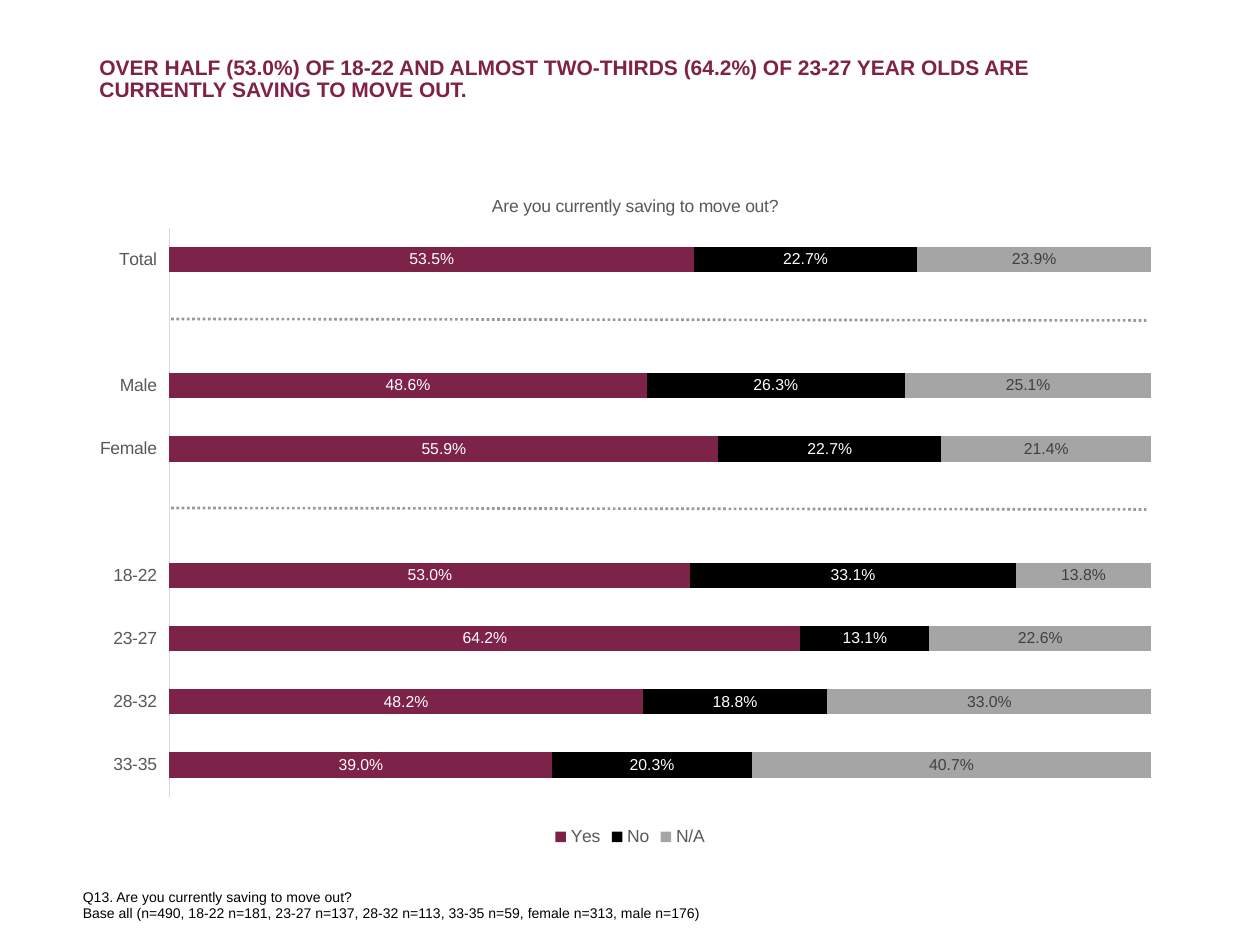
from lxml import etree
from pptx import Presentation
from pptx.chart.data import CategoryChartData
from pptx.dml.color import RGBColor
from pptx.enum.chart import (XL_CHART_TYPE, XL_LABEL_POSITION,
                             XL_LEGEND_POSITION, XL_TICK_LABEL_POSITION, XL_TICK_MARK)
from pptx.enum.dml import MSO_LINE
from pptx.enum.shapes import MSO_CONNECTOR
from pptx.enum.text import MSO_ANCHOR, PP_ALIGN
from pptx.oxml.ns import qn
from pptx.util import Cm, Pt

HEADLINE = ("OVER HALF (53.0%) OF 18-22 AND ALMOST TWO-THIRDS (64.2%) OF 23-27 "
            "YEAR OLDS ARE CURRENTLY SAVING TO MOVE OUT.")
QUESTION = "Are you currently saving to move out?"
FOOTNOTES = [
    "Q13. Are you currently saving to move out?",
    "Base all (n=490, 18-22 n=181, 23-27 n=137, 28-32 n=113, 33-35 n=59, "
    "female n=313, male n=176)",
]
COLORS = {
    "headline": "802245", "yes": "7D2248", "no": "000000", "na": "A5A5A5",
    "white": "FFFFFF", "dark": "404040", "axis_text": "595959",
    "axis_line": "D9D9D9", "divider": "98989A", "black": "000000",
}
# Answer, bar colour, label colour
ANSWERS = [("Yes", "yes", "white"), ("No", "no", "white"), ("N/A", "na", "dark")]
# Groups from top to bottom; an empty row leaves room for a divider
GROUPS = [
    ("Total", (0.535, 0.227, 0.239)),
    ("", (None, None, None)),
    ("Male", (0.486, 0.263, 0.251)),
    ("Female", (0.559, 0.227, 0.214)),
    ("", (None, None, None)),
    ("18-22", (0.53, 0.331, 0.138)),
    ("23-27", (0.642, 0.131, 0.226)),
    ("28-32", (0.482, 0.188, 0.33)),
    ("33-35", (0.39, 0.203, 0.407)),
]
DIVIDER_TOPS = [6.43, 10.24]
FONT = "Arial"


def color(key):
    return RGBColor.from_string(COLORS[key])


def style_font(font, size, key, bold=False):
    font.name, font.size, font.bold = FONT, Pt(size), bold
    font.color.rgb = color(key)


def set_layout(parent, index, **fractions):
    """Place a chart part by fractions of the chart's width and height."""
    for old in parent.findall(qn("c:layout")):
        parent.remove(old)
    layout = etree.Element(qn("c:layout"))
    manual = etree.SubElement(layout, qn("c:manualLayout"))
    if "w" in fractions:
        etree.SubElement(manual, qn("c:layoutTarget")).set("val", "inner")
    for mode in ("xMode", "yMode"):
        etree.SubElement(manual, qn("c:" + mode)).set("val", "edge")
    for name, value in fractions.items():
        etree.SubElement(manual, qn("c:" + name)).set("val", str(value))
    parent.insert(index, layout)


def add_headline(slide):
    title = slide.shapes.title
    title.left, title.top, title.width, title.height = Cm(1.75), Cm(1.02), Cm(21.9), Cm(1.63)
    frame = title.text_frame
    frame.text = HEADLINE
    frame.word_wrap = True
    frame.vertical_anchor = MSO_ANCHOR.TOP
    paragraph = frame.paragraphs[0]
    paragraph.alignment = PP_ALIGN.LEFT
    paragraph.line_spacing = 0.9
    style_font(paragraph.font, 12, "headline", bold=True)


def add_savings_chart(slide):
    rows = GROUPS[::-1]
    data = CategoryChartData(number_format="0.0%")
    data.categories = [group for group, _ in rows]
    for i, (answer, _, _) in enumerate(ANSWERS):
        data.add_series(answer, [shares[i] for _, shares in rows])
    chart = slide.shapes.add_chart(XL_CHART_TYPE.BAR_STACKED_100, Cm(1.75), Cm(3.3),
                                   Cm(21.9), Cm(13.87), data).chart
    style_font(chart.font, 10, "axis_text")

    chart.has_title = True
    question = chart.chart_title.text_frame
    question.text = QUESTION
    style_font(question.paragraphs[0].font, 10, "axis_text")
    set_layout(chart.chart_title._element, 1, x=0.37, y=0.04)

    chart.has_legend = True
    chart.legend.position = XL_LEGEND_POSITION.BOTTOM
    chart.legend.include_in_layout = False
    style_font(chart.legend.font, 10, "axis_text")

    groups = chart.category_axis
    groups.major_tick_mark = groups.minor_tick_mark = XL_TICK_MARK.NONE
    groups.tick_label_position = XL_TICK_LABEL_POSITION.LOW
    groups.format.line.color.rgb = color("axis_line")
    groups.format.line.width = Pt(0.75)
    style_font(groups.tick_labels.font, 10, "axis_text")
    shares = chart.value_axis
    shares.visible = shares.has_major_gridlines = False
    shares.minimum_scale, shares.maximum_scale = 0, 1

    plot = chart.plots[0]
    plot.gap_width, plot.overlap = 150, 100
    plot.vary_by_categories = False
    for series, (_, fill, label) in zip(plot.series, ANSWERS):
        series.format.fill.solid()
        series.format.fill.fore_color.rgb = color(fill)
        labels = series.data_labels
        labels.show_value = True
        labels.position = XL_LABEL_POSITION.CENTER
        labels.number_format, labels.number_format_is_linked = "0.0%", False
        style_font(labels.font, 9, label)
    plot_area = chart._chartSpace.find(".//" + qn("c:plotArea"))
    set_layout(plot_area, 0, x=0.076, y=0.093, w=0.904, h=0.827)


def add_divider(slide, top):
    divider = slide.shapes.add_connector(MSO_CONNECTOR.STRAIGHT, Cm(3.45), Cm(top),
                                         Cm(23.11), Cm(top + 0.03))
    divider.line.color.rgb = color("divider")
    divider.line.width = Pt(1.5)
    divider.line.dash_style = MSO_LINE.ROUND_DOT
    etree.SubElement(divider._element.spPr, qn("a:effectLst"))


def add_footnotes(slide):
    frame = slide.shapes.add_textbox(Cm(1.42), Cm(17.78), Cm(13.13), Cm(0.94)).text_frame
    frame.word_wrap = False
    frame.text = "\n".join(FOOTNOTES)
    for paragraph in frame.paragraphs:
        style_font(paragraph.font, 8, "black")


def main():
    presentation = Presentation()
    presentation.slide_width, presentation.slide_height = Cm(25.4), Cm(19.05)
    slide = presentation.slides.add_slide(presentation.slide_layouts[5])
    add_headline(slide)
    add_footnotes(slide)
    add_savings_chart(slide)
    for top in DIVIDER_TOPS:
        add_divider(slide, top)
    presentation.save("out.pptx")


if __name__ == "__main__":
    main()
